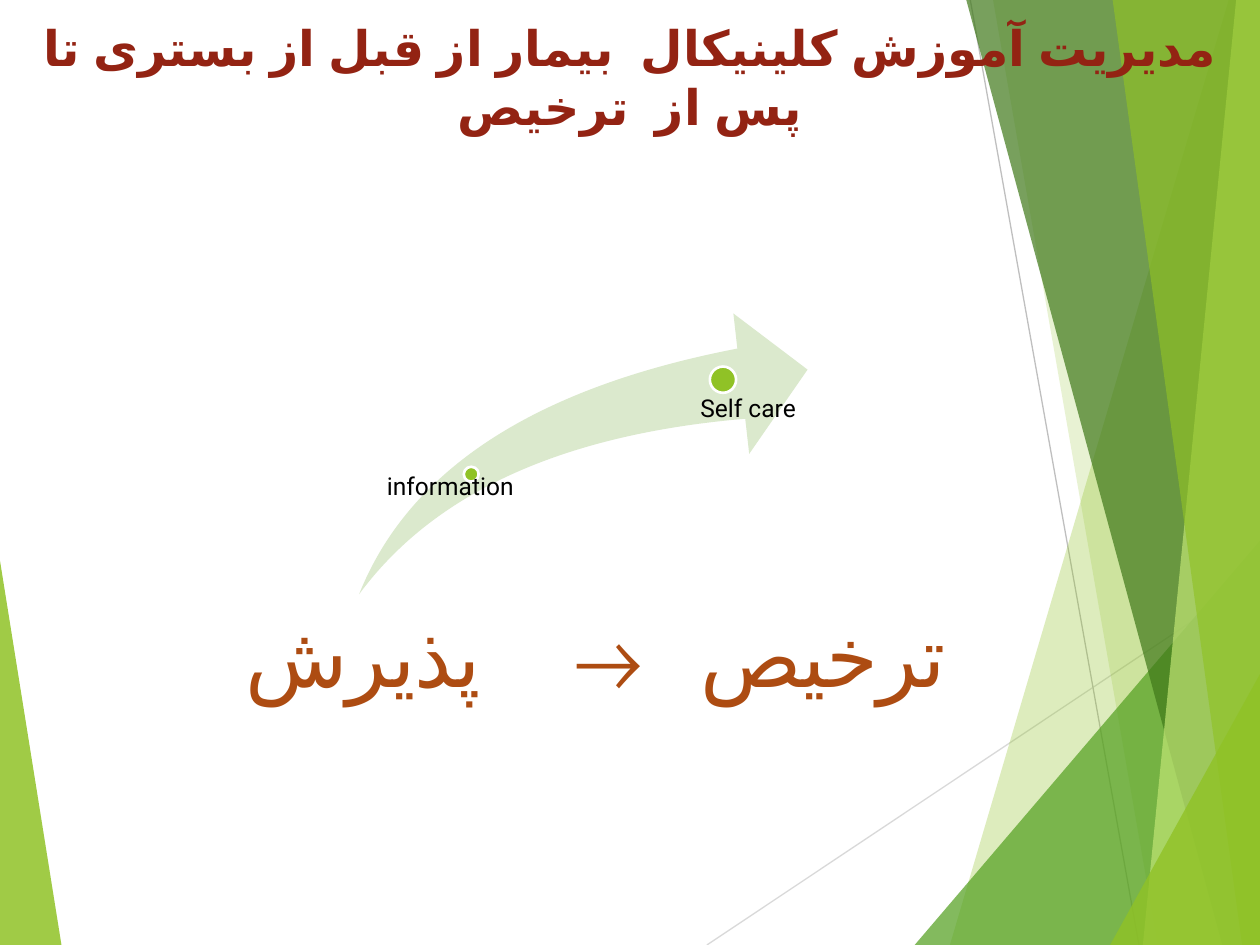
from lxml import etree
from pptx import Presentation
from pptx import util as u
from pptx.dml.color import RGBColor
from pptx.enum import lang, shapes, text
from pptx.oxml import ns

LIME = RGBColor(0x90, 0xC2, 0x26)
PALE_LIME = RGBColor(0xC0, 0xE4, 0x74)
GREEN = RGBColor(0x54, 0xA0, 0x21)
DARK_GREEN = RGBColor(0x3F, 0x78, 0x19)
PALE_GREEN = RGBColor(0xDB, 0xE9, 0xCD)
LIGHT_GREY = RGBColor(0xD9, 0xD9, 0xD9)
GREY = RGBColor(0xBF, 0xBF, 0xBF)
WHITE = RGBColor(0xFF, 0xFF, 0xFF)
BLACK = RGBColor(0, 0, 0)
RED = RGBColor(0x93, 0x23, 0x13)
ORANGE = RGBColor(0xAD, 0x4C, 0x12)
PERSIAN = lang.MSO_LANGUAGE_ID.FARSI
ENGLISH = lang.MSO_LANGUAGE_ID.ENGLISH_US
W, H = 25.4, 19.05


def write(tf, runs, font, size, color, bold=False, align=text.PP_ALIGN.LEFT,
          rtl=False, spacing=None, language=PERSIAN):
    p = tf.paragraphs[0]
    p.alignment = align
    if rtl:
        p._p.get_or_add_pPr().set("rtl", "1")
    if spacing:
        p.line_spacing = spacing
    for content, tracking in runs:
        r = p.add_run()
        r.text = content
        r.font.name, r.font.size, r.font.bold = font, u.Pt(size), bold
        r.font.color.rgb = color
        r.font.language_id = language
        if tracking:
            r._r.get_or_add_rPr().set("spc", str(round(tracking * 100)))


class Painter:
    """Draws the elements of one slide in a shared style."""

    def __init__(self, slide):
        self.s = slide

    def paint(self, sp, color, opacity=100, outline=None):
        sp.shadow.inherit = False
        sp.fill.solid()
        sp.fill.fore_color.rgb = color
        if opacity < 100:
            clr = sp._element.spPr.find(".//" + ns.qn("a:srgbClr"))
            etree.SubElement(clr, ns.qn("a:alpha"), val=str(opacity * 1000))
        if outline is None:
            sp.line.fill.background()
        else:
            sp.line.color.rgb = outline
            sp.line.width = u.Pt(1.5)

    def facet(self, points, color, opacity):
        pts = [(u.Cm(x), u.Cm(y)) for x, y in points]
        fb = self.s.shapes.build_freeform(*pts[0])
        fb.add_line_segments(pts[1:])
        self.paint(fb.convert_to_shape(), color, opacity)

    def line(self, x1, y1, x2, y2, color):
        cx = self.s.shapes.add_connector(shapes.MSO_CONNECTOR.STRAIGHT, *map(u.Cm, (x1, y1, x2, y2)))
        cx.line.color.rgb = color
        cx.line.width = u.Pt(0.75)
        etree.SubElement(cx._element.spPr, ns.qn("a:effectLst"))

    def swoosh(self, *box):
        sp = self.s.shapes.add_shape(shapes.MSO_SHAPE.SWOOSH_ARROW, *map(u.Cm, box))
        sp.adjustments[0] = sp.adjustments[1] = 0.25
        self.paint(sp, PALE_GREEN)

    def dot(self, x, y, d):
        sp = self.s.shapes.add_shape(shapes.MSO_SHAPE.OVAL, *map(u.Cm, (x, y, d, d)))
        self.paint(sp, LIME, outline=WHITE)

    def text(self, box, runs, inset=None, anchor=text.MSO_ANCHOR.TOP, **style):
        tf = self.s.shapes.add_textbox(*map(u.Cm, box)).text_frame
        tf.word_wrap = True
        tf.vertical_anchor = anchor
        if inset is not None:
            tf.margin_left = u.Cm(inset)
            tf.margin_top = tf.margin_right = tf.margin_bottom = 0
        write(tf, runs, **style)


def main():
    prs = Presentation()
    prs.slide_width, prs.slide_height = u.Cm(W), u.Cm(H)
    s = Painter(prs.slides.add_slide(prs.slide_layouts[6]))

    s.facet([(0, 11.3), (1.24, H), (0, H)], LIME, 85)
    s.line(14.25, H, W, 11.61, LIGHT_GREY)
    s.line(19.56, 0, 22.96, H, GREY)
    for top, bottom, color, opacity in [
        ((24.77, 0), 19.15, LIME, 30),
        ((20.02, 0), 23.34, LIME, 20),
        ((W, 10.9), 18.44, GREEN, 72),
        ((19.48, 0), 24.64, DARK_GREEN, 70),
        ((24.92, 0), 23.04, PALE_LIME, 70),
        ((22.43, 0), 25.04, LIME, 65),
        ((W, 13.59), 22.38, LIME, 80),
    ]:
        corner = [(W, top[1])] if top[0] < W else []
        s.facet([top, (bottom, H), (W, H)] + corner, color, opacity)

    s.text((0, 0.05, W, 2.97),
           [("مدیریت آموزش کلینیکال  بیمار از قبل از بستری تا پس از  ترخیص", 0)],
           anchor=text.MSO_ANCHOR.MIDDLE, font="Arial", size=28, color=RED,
           bold=True, align=text.PP_ALIGN.CENTER)

    s.swoosh(7.24, 6.32, 9.04, 5.66)
    for dot, box, inset, label in [
        ((9.35, 9.41, 0.3), (7.62, 9.56, 2.95, 2.41), 0.18, "information"),
        ((14.31, 7.39, 0.53), (13.84, 8, 2.95, 3.73), 0.28, "Self care"),
    ]:
        s.dot(*dot)
        s.text(box, [(label, 0)], inset, font="Roboto", size=14, color=BLACK,
               spacing=0.9, language=ENGLISH)

    s.text((4.19, 12.04, 15.14, 2.31),
           [("ترخیص", -0.5), (" ", 21), ("→", -0.5), (" ", 42), ("پذیرش", -0.5)],
           font="Calibri", size=48, color=ORANGE, align=text.PP_ALIGN.RIGHT, rtl=True)
    prs.save("out.pptx")


if __name__ == "__main__":
    main()
